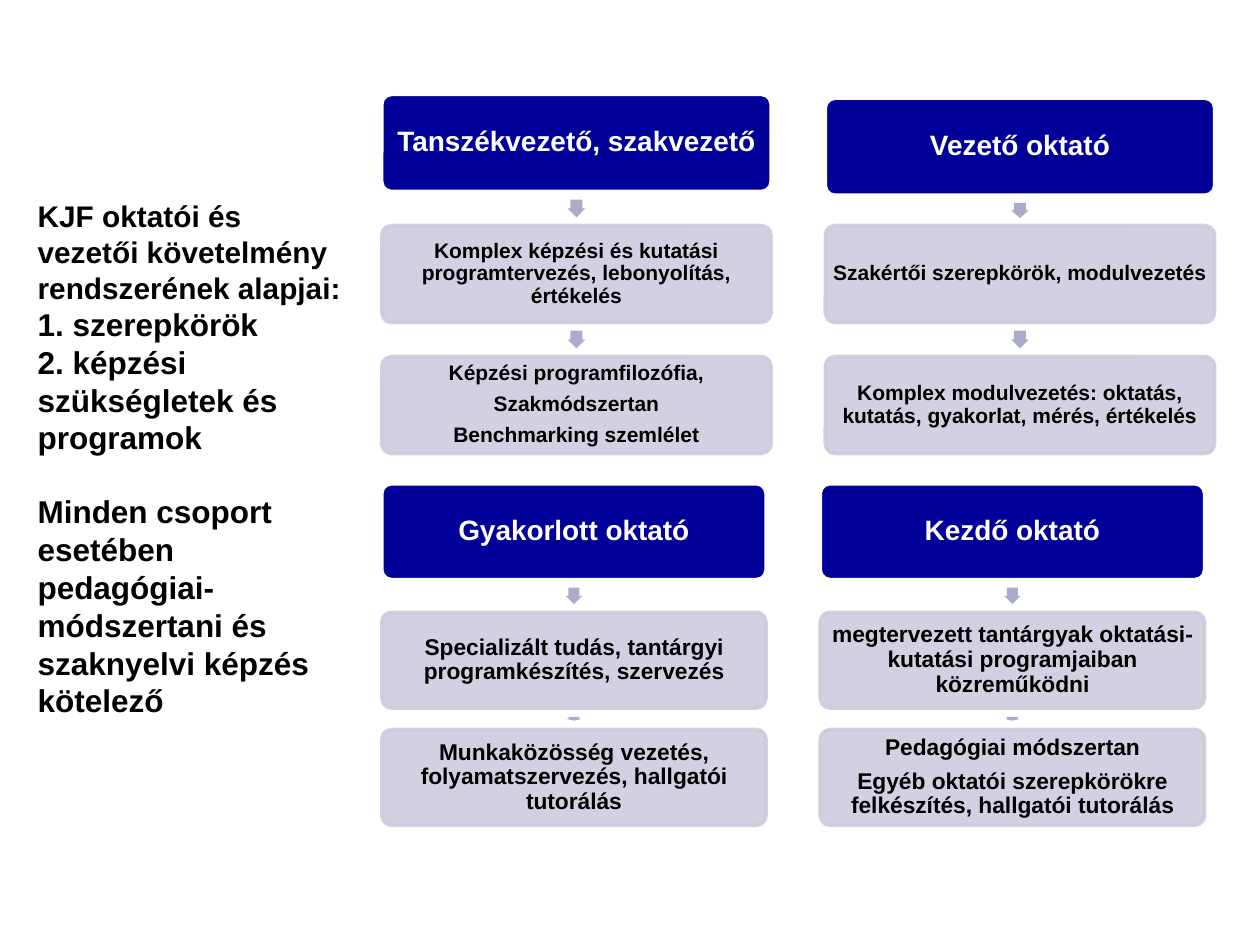
from pptx import Presentation
from pptx.dml.color import RGBColor
from pptx.enum.shapes import MSO_SHAPE
from pptx.enum.text import MSO_ANCHOR, PP_ALIGN
from pptx.oxml.ns import qn
from pptx.util import Inches, Pt
from lxml import etree

ROUNDED = MSO_SHAPE.ROUNDED_RECTANGLE
DOWN_ARROW = MSO_SHAPE.DOWN_ARROW
MIDDLE = MSO_ANCHOR.MIDDLE
CENTER, LEFT = PP_ALIGN.CENTER, PP_ALIGN.LEFT
NAVY, LAVENDER, ARROW, WHITE, BLACK = "000099", "CCCCDE", "ABABCA", "FFFFFF", "000000"

TITLE = [
    ("KJF oktatói és vezetői követelmény rendszerének alapjai:", 17, 0),
    ("1. szerepkörök", 18, 0),
    ("2. képzési szükségletek és programok", 18, 0),
    ("Minden csoport esetében pedagógiai-módszertani és szaknyelvi képzés kötelező", 18, 20.7),
]
UPPER = {"width": 3.09, "height": 0.77, "size": 12, "arrow_width": 0.14}
LOWER = {"width": 3.05, "height": 0.76, "size": 13, "arrow_width": 0.13}
COLUMNS = [
    (UPPER, 3.03, (0.75, 1.79, 2.83), (0.14, 0.14), [
        ["Tanszékvezető, szakvezető"],
        ["Komplex képzési és kutatási programtervezés, lebonyolítás, értékelés"],
        ["Képzési programfilozófia,", "Szakmódszertan", "Benchmarking szemlélet"]]),
    (UPPER, 6.55, (0.78, 1.79, 2.83), (0.12, 0.14), [
        ["Vezető oktató"],
        ["Szakértői szerepkörök, modulvezetés"],
        ["Komplex modulvezetés: oktatás, kutatás, gyakorlat, mérés, értékelés"]]),
    (LOWER, 3.03, (3.84, 4.86, 5.79), (0.13, 0.03), [
        ["Gyakorlott oktató"],
        ["Specializált tudás, tantárgyi programkészítés, szervezés"],
        ["Munkaközösség vezetés, folyamatszervezés, hallgatói tutorálás"]]),
    (LOWER, 6.51, (3.84, 4.86, 5.79), (0.13, 0.03), [
        ["Kezdő oktató"],
        ["megtervezett tantárgyak oktatási-kutatási programjaiban közreműködni"],
        ["Pedagógiai módszertan",
         "Egyéb oktatói szerepkörökre felkészítés, hallgatói tutorálás"]]),
]


def paint(color_format, color):
    color_format.rgb = RGBColor.from_string(color)


def add_span(para, text, size, color, align):
    para.alignment = align
    span = para.add_run()
    span.text = text
    span.font.name, span.font.size, span.font.bold = "Arial", Pt(size), True
    paint(span.font.color, color)


def next_para(frame, index):
    return frame.add_paragraph() if index else frame.paragraphs[0]


def add_shape(page, kind, left, top, width, height, fill):
    shape = page.shapes.add_shape(kind, *map(Inches, (left, top, width, height)))
    shape.shadow.inherit = False
    shape.fill.solid()
    paint(shape.fill.fore_color, fill)
    return shape


def add_box(page, left, top, style, lines, heading):
    fill, outline, ink = (NAVY, WHITE, WHITE) if heading else (LAVENDER, LAVENDER, BLACK)
    size = 16 if heading else style["size"]
    box = add_shape(page, ROUNDED, left, top, style["width"], style["height"], fill)
    box.adjustments[0] = 0.1
    box.line.width = Pt(2)
    paint(box.line.color, outline)
    if not heading:
        for color in box.element.spPr.iter(qn("a:srgbClr")):
            etree.SubElement(color, qn("a:alpha")).set("val", "90000")
    frame = box.text_frame
    frame.word_wrap = True
    frame.vertical_anchor = MIDDLE
    frame.margin_left = frame.margin_right = 0
    frame.margin_top = frame.margin_bottom = 0
    for index, line in enumerate(lines):
        para = next_para(frame, index)
        para.line_spacing = 0.9
        para.space_after = Pt(round(size * 0.4, 1))
        add_span(para, line, size, ink, CENTER)


def add_arrow(page, center, middle, width, length):
    arrow = add_shape(page, DOWN_ARROW, center - width / 2, middle - length / 2,
                      width, length, ARROW)
    arrow.adjustments[0], arrow.adjustments[1] = 0.67, 0.5
    arrow.line.fill.background()


def add_title(page):
    box = page.shapes.add_textbox(Inches(0.2), Inches(1.31), Inches(2.68), Inches(4.96))
    frame = box.text_frame
    frame.word_wrap = True
    frame.vertical_anchor = MIDDLE
    frame.margin_bottom = Inches(0.35)
    for index, (text, size, before) in enumerate(TITLE):
        para = next_para(frame, index)
        if before:
            para.space_before = Pt(before)
        add_span(para, text, size, BLACK, LEFT)


def main():
    """Build the slide of teaching roles and their training needs."""
    deck = Presentation()
    deck.slide_width, deck.slide_height = Inches(10), Inches(7.5)
    page = deck.slides.add_slide(deck.slide_layouts[6])
    add_title(page)
    for style, left, tops, arrow_lengths, boxes in COLUMNS:
        for index, (top, lines) in enumerate(zip(tops, boxes)):
            add_box(page, left, top, style, lines, index == 0)
        for upper, lower, length in zip(tops, tops[1:], arrow_lengths):
            middle = (upper + style["height"] + lower) / 2
            add_arrow(page, left + style["width"] / 2, middle, style["arrow_width"], length)
    deck.save("out.pptx")


if __name__ == "__main__":
    main()
